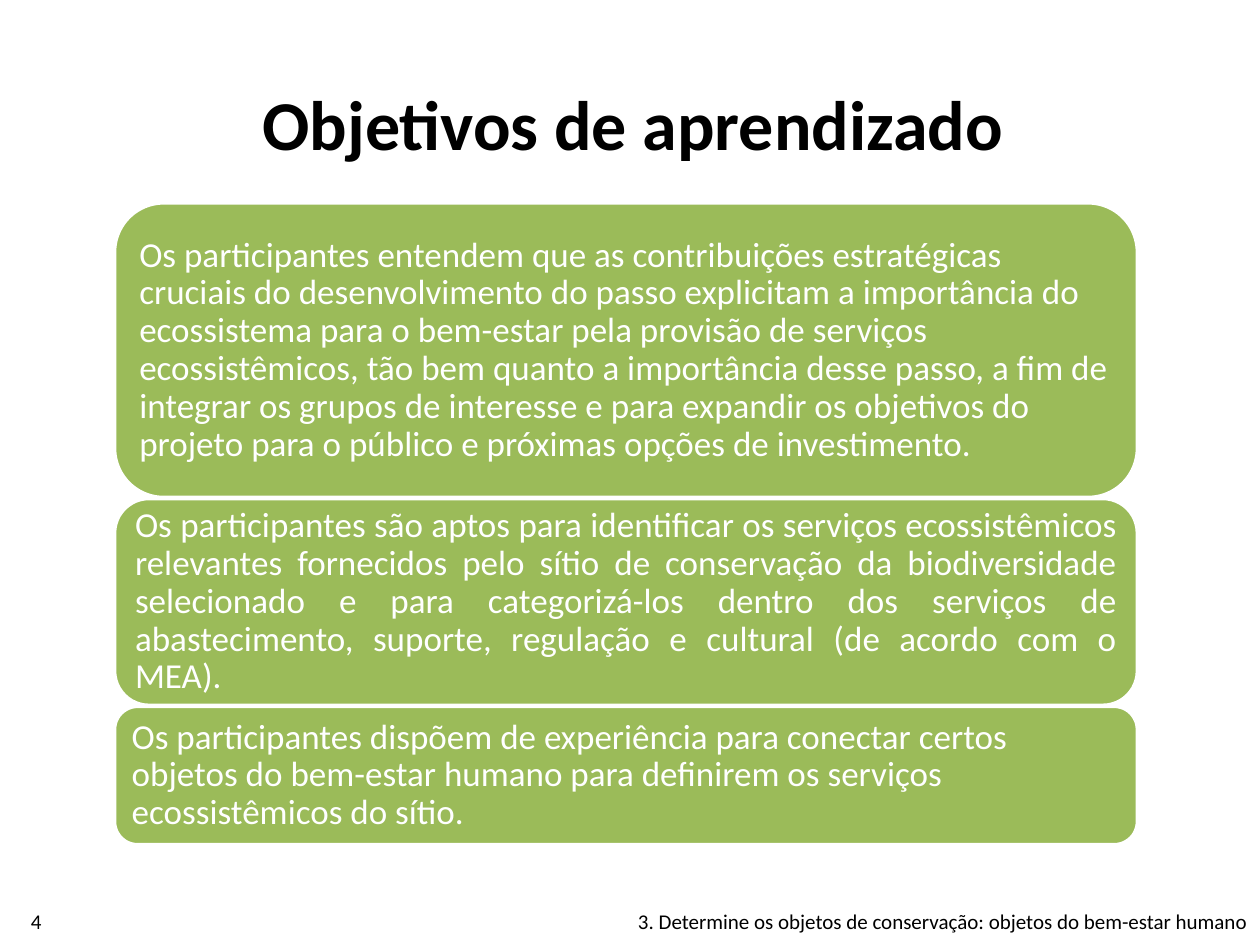
from dataclasses import dataclass

from pptx import Presentation
from pptx.dml.color import RGBColor
from pptx.enum.shapes import MSO_SHAPE
from pptx.enum.text import MSO_ANCHOR, PP_ALIGN
from pptx.util import Cm, Pt

ROUND = MSO_SHAPE.ROUNDED_RECTANGLE
MIDDLE = MSO_ANCHOR.MIDDLE
LEFT, CENTER, RIGHT, JUSTIFY = (
    PP_ALIGN.LEFT, PP_ALIGN.CENTER, PP_ALIGN.RIGHT, PP_ALIGN.JUSTIFY)


@dataclass(frozen=True)
class Theme:
    font: str = "Calibri"
    ink: RGBColor = RGBColor(0, 0, 0)
    paper: RGBColor = RGBColor(255, 255, 255)
    green: RGBColor = RGBColor(0x9B, 0xBB, 0x59)
    title: Pt = Pt(40)
    body: Pt = Pt(20)
    small: Pt = Pt(12)
    edge: Pt = Pt(2)


THEME = Theme()

# Height in cm, alignment and wording of each goal
GOALS = [
    (5.94, LEFT,
     "Os participantes entendem que as contribuições estratégicas cruciais do "
     "desenvolvimento do passo explicitam a importância do ecossistema para o "
     "bem-estar pela provisão de serviços ecossistêmicos, tão bem quanto a "
     "importância desse passo, a fim de integrar os grupos de interesse e para "
     "expandir os objetivos do projeto para o público e próximas opções de "
     "investimento."),
    (4.17, JUSTIFY,
     "Os participantes são aptos para identificar os serviços ecossistêmicos "
     "relevantes fornecidos pelo sítio de conservação da biodiversidade "
     "selecionado e para categorizá-los dentro dos serviços de abastecimento, "
     "suporte, regulação e cultural (de acordo com o MEA)."),
    (2.79, LEFT,
     "Os participantes dispõem de experiência para conectar certos objetos do "
     "bem-estar humano para definirem os serviços ecossistêmicos do sítio."),
]


def apply(item, values):
    for name, value in values.items():
        setattr(item, name, value)


def write(shape, text, size, color, align, bold=False):
    apply(shape.text_frame, {"word_wrap": True, "vertical_anchor": MIDDLE})
    para = shape.text_frame.paragraphs[0]
    para.alignment = align
    run = para.add_run()
    run.text = text
    apply(run.font, {"name": THEME.font, "size": size, "bold": bold})
    run.font.color.rgb = color
    return para


def add_label(slide, box, text, size, align, bold=False):
    shape = slide.shapes.add_textbox(*map(Cm, box))
    write(shape, text, size, THEME.ink, align, bold)


def add_card(slide, box, text, align):
    card = slide.shapes.add_shape(ROUND, *map(Cm, box))
    card.shadow.inherit = False
    card.fill.solid()
    card.fill.fore_color.rgb = THEME.green
    card.line.color.rgb = THEME.paper
    card.line.width = THEME.edge
    sides = ("left", "top", "right", "bottom")
    apply(card.text_frame, {f"margin_{side}": Cm(0.21) for side in sides})
    para = write(card, text, THEME.body, THEME.paper, align)
    para.line_spacing = 0.9


def add_goals(slide, left, top, width, gap):
    """Stack the goal cards downwards from top."""
    for height, align, text in GOALS:
        add_card(slide, (left, top, width, height), text, align)
        top += height + gap


def main():
    deck = Presentation()
    apply(deck, {"slide_width": Cm(25.4), "slide_height": Cm(19.05)})
    slide = deck.slides.add_slide(deck.slide_layouts[6])
    add_label(slide, (3.6, 0.97, 18.32, 3), "Objetivos de aprendizado",
              THEME.title, CENTER, bold=True)
    add_goals(slide, left=2.31, top=4.09, width=20.62, gap=0.02)
    add_label(slide, (-0.03, 18.08, 1.52, 0.97), "4", THEME.small, CENTER)
    add_label(slide, (10.49, 18.08, 14.91, 0.97),
              "3. Determine os objetos de conservação: "
              "objetos do bem-estar humano", THEME.small, RIGHT)
    deck.save("out.pptx")


if __name__ == "__main__":
    main()
